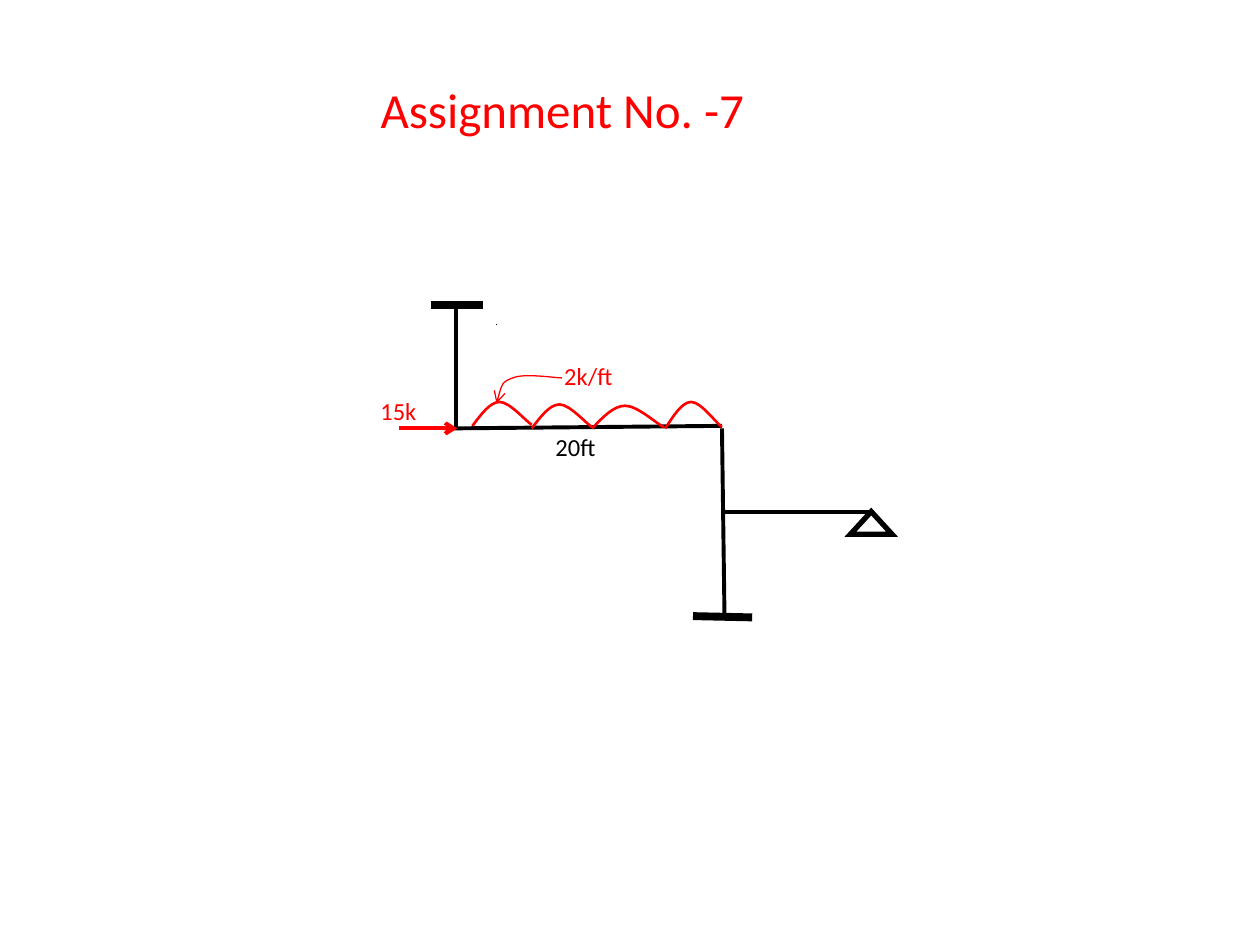
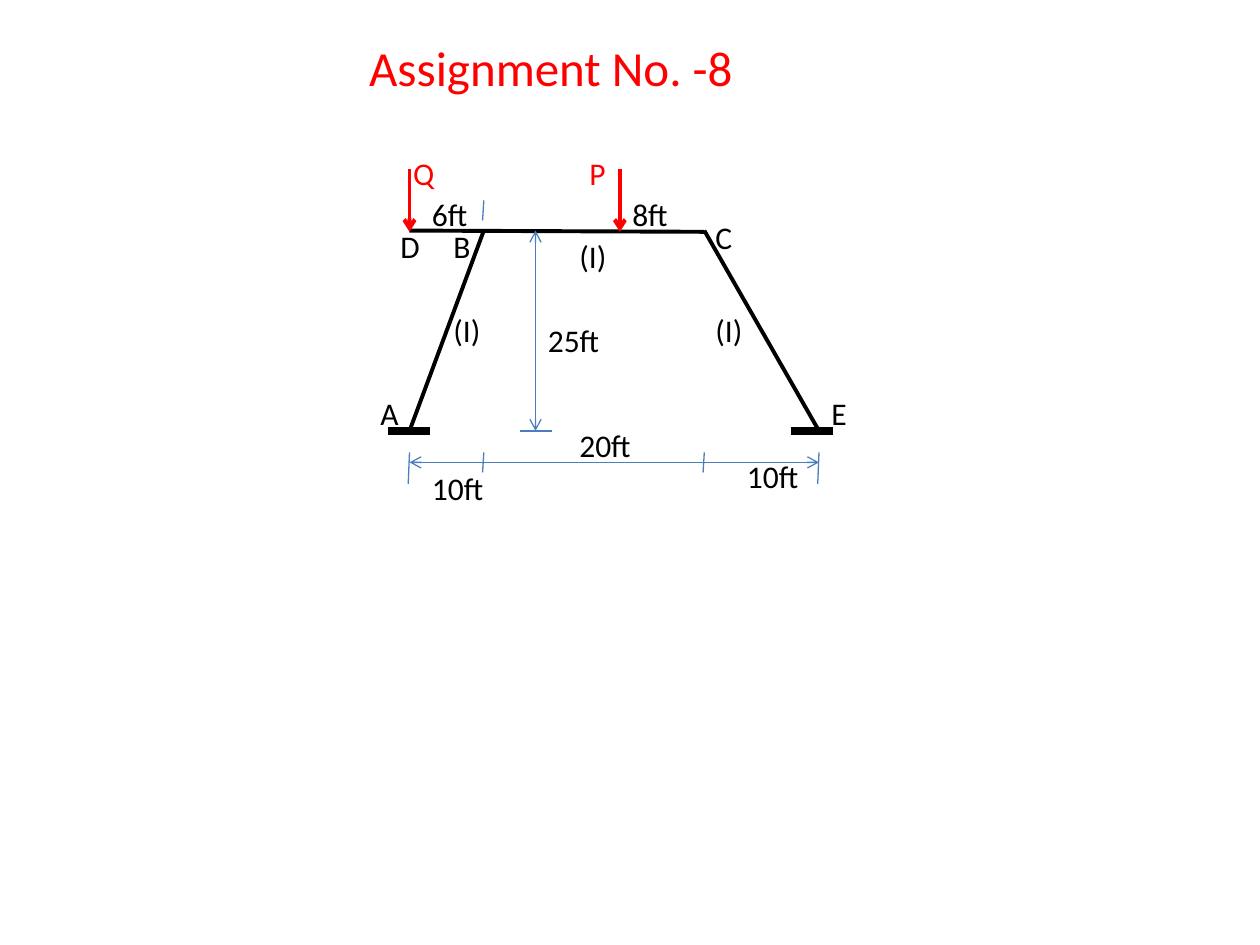
from lxml import etree
from pptx import Presentation
from pptx.dml.color import RGBColor
from pptx.enum.shapes import MSO_CONNECTOR, MSO_SHAPE
from pptx.enum.text import MSO_ANCHOR, MSO_AUTO_SIZE, PP_ALIGN
from pptx.oxml.ns import qn
from pptx.util import Inches, Pt

STRAIGHT = MSO_CONNECTOR.STRAIGHT
TRIANGLE = MSO_SHAPE.ISOSCELES_TRIANGLE
LEFT, TOP = PP_ALIGN.LEFT, MSO_ANCHOR.TOP
FIXED, GROW = MSO_AUTO_SIZE.NONE, MSO_AUTO_SIZE.SHAPE_TO_FIT_TEXT

HEX = {"ink": "000000", "load": "FF0000", "dim": "4B7EBC", "paper": "FFFFFF"}
FONT = "Calibri"
BAR, BASE, THIN, CURVE = 2.25, 4.5, 0.75, 1.5
HEAD, TAIL = "headEnd", "tailEnd"


def color(name):
    return RGBColor.from_string(HEX[name])


def apply(item, values):
    for name, value in values.items():
        setattr(item, name, value)


def place(box, *point):
    """Turn a point inside the box into slide lengths."""
    return [Inches(start + part) for start, part in zip(box, point)]


def stroke(shape, tone, width, ends=()):
    shape.line.color.rgb = color(tone)
    shape.line.width = Pt(width)
    line = shape.line._get_or_add_ln()
    etree.SubElement(line, qn("a:miter"), lim="800000")
    for end in ends:
        etree.SubElement(line, qn("a:" + end), type="arrow")


def bar(group, box, start, stop, tone="ink", width=BAR, ends=()):
    line = group.shapes.add_connector(
        STRAIGHT, *place(box, *start), *place(box, *stop))
    stroke(line, tone, width, ends)
    etree.SubElement(line._element.spPr, qn("a:effectLst"))


def curve(group, box, points, width, ends=()):
    """Draw joined cubic curves: a start, then three points for each curve."""
    pen = group.shapes.build_freeform(*place(box, *points[0]))
    pen.add_line_segments([place(box, *point) for point in points[1:]], close=False)
    shape = pen.convert_to_shape()
    lines = list(shape._element.iter(qn("a:lnTo")))
    for i in range(0, len(lines), 3):
        bend = etree.SubElement(lines[i].getparent(), qn("a:cubicBezTo"))
        for line in lines[i:i + 3]:
            bend.append(line[0])
            line.getparent().remove(line)
    shape.shadow.inherit = False
    shape.fill.background()
    stroke(shape, "load", width, ends)


def style(frame, text, size, tone, fit=GROW, after=0):
    apply(frame, {"text": text, "word_wrap": True, "auto_size": fit,
                  "vertical_anchor": TOP})
    para = frame.paragraphs[0]
    apply(para, {"alignment": LEFT, "space_after": Pt(after)})
    apply(para.runs[0].font, {"name": FONT, "size": Pt(size)})
    para.runs[0].font.color.rgb = color(tone)


def label(group, box, text, area, size=18, tone="ink", **extra):
    x, y, wide, high = area
    note = group.shapes.add_textbox(*place(box, x, y), Inches(wide), Inches(high))
    style(note.text_frame, text, size, tone, **extra)


def title(slide, text, left, top):
    head = slide.shapes.title
    apply(head, {"left": Inches(left), "top": Inches(top),
                 "width": Inches(3.17), "height": Inches(0.57)})
    style(head.text_frame, text, 28, "load")


def hump(group, box, left, wide, foot, high):
    shares = [(0, 0), (0.15, 0.5), (0.3, 1), (0.46, 1), (0.63, 1), (0.9, 0.2), (1, 0.05)]
    curve(group, box, [(left + x * wide, foot - y * high) for x, y in shares], CURVE)


def stepped(group, box):
    """Draw the stepped frame with its spread load and side push."""
    for start, stop in [((0.66, 0.98), (2.81, 0.96)), ((0.7, 0.03), (0.7, 0.98)),
                        ((2.81, 0.98), (2.83, 2.47))]:
        bar(group, box, start, stop)
    hinge = group.shapes.add_shape(
        TRIANGLE, *place(box, 3.83, 1.64), Inches(0.33), Inches(0.18))
    hinge.shadow.inherit = False
    hinge.fill.solid()
    hinge.fill.fore_color.rgb = color("paper")
    stroke(hinge, "ink", 3)
    bar(group, box, (3.05, 2.48), (2.58, 2.47), width=BASE)
    for spread in [(0.83, 0.47, 0.96, 0.19), (1.3, 0.48, 0.98, 0.19),
                   (1.78, 0.57, 0.98, 0.18), (2.36, 0.45, 0.98, 0.21)]:
        hump(group, box, *spread)
    curve(group, box, [(1.02, 0.78), (1.04, 0.7), (1.06, 0.61), (1.15, 0.58),
                       (1.24, 0.54), (1.48, 0.58), (1.54, 0.58)], THIN, [HEAD])
    bar(group, box, (1.02, 0.15), (1.02, 0.16), width=THIN)
    bar(group, box, (0.5, 0), (0.91, 0), width=BASE)
    bar(group, box, (0.25, 0.98), (0.71, 0.98), "load", ends=[TAIL])
    bar(group, box, (2.83, 1.64), (4, 1.64))
    for text, area, tone in [("2k/ft", (1.46, 0.4, 0.83, 0.4), "load"),
                             ("20ft", (1.39, 0.96, 0.62, 0.35), "ink"),
                             ("15k", (0, 0.67, 0.58, 0.32), "load")]:
        label(group, box, text, area, 14, tone, fit=FIXED, after=10)


def sloped(group, box):
    """Draw the frame with sloping legs, its loads and its sizes."""
    a, b, c, e = 0.33, 0.92, 2.67, 3.58
    deck, ground, rule = 0.66, 2.25, 2.5
    for start, stop in [((b, deck), (a, ground)), ((a, deck), (c, deck + 0.01)),
                        ((c, deck), (e, ground))]:
        bar(group, box, start, stop)
    for left in (0.16, 3.36):
        bar(group, box, (left, ground), (left + 0.33, ground), width=BASE)
    for x in (a, 2):
        bar(group, box, (x, 0.17), (x, deck + 0.01), "load", ends=[TAIL])
    for start, stop in [((1.33, deck), (1.33, ground)), ((a, rule), (e, rule))]:
        bar(group, box, start, stop, "dim", THIN, [HEAD, TAIL])
    bar(group, box, (1.21, ground), (1.46, ground), "dim", THIN)
    for x, top, foot in [(a, 2.42, 2.67), (b, 2.42, 2.58), (c, 2.42, 2.58),
                         (e, 2.42, 2.67), (b, 0.42, 0.58)]:
        bar(group, box, (x, top), (x - 0.01, foot), "dim", THIN)
    for text, x, y, wide in [
            ("A", 0, 1.91, 0.33), ("B", 0.58, 0.58, 0.33), ("C", 2.66, 0.51, 0.33),
            ("D", 0.16, 0.58, 0.33), ("E", 3.58, 1.91, 0.33), ("(I)", 1.58, 0.66, 0.83),
            ("(I)", 0.58, 1.25, 0.5), ("(I)", 2.66, 1.25, 0.42), ("25ft", 1.33, 1.33, 0.67),
            ("20ft", 1.58, 2.16, 0.67), ("10ft", 2.91, 2.41, 0.67),
            ("10ft", 0.41, 2.5, 0.67), ("8ft", 2, 0.33, 0.67), ("6ft", 0.41, 0.33, 0.67)]:
        label(group, box, text, (x, y, wide, 0.4))
    for text, x, wide in [("P", 1.66, 0.42), ("Q", 0.26, 0.5)]:
        label(group, box, text, (x, 0, wide, 0.4), tone="load")


def main():
    deck = Presentation()
    apply(deck, {"slide_width": Inches(10), "slide_height": Inches(7.5)})
    for text, left, top, draw, box in [
            ("Assignment No. -7", 2.92, 0.58, stepped, (2.92, 2.42)),
            ("Assignment No. -8", 2.83, 0.25, sloped, (2.92, 1.17))]:
        slide = deck.slides.add_slide(deck.slide_layouts[5])
        title(slide, text, left, top)
        draw(slide.shapes.add_group_shape(), box)
    deck.save("out.pptx")


if __name__ == "__main__":
    main()
